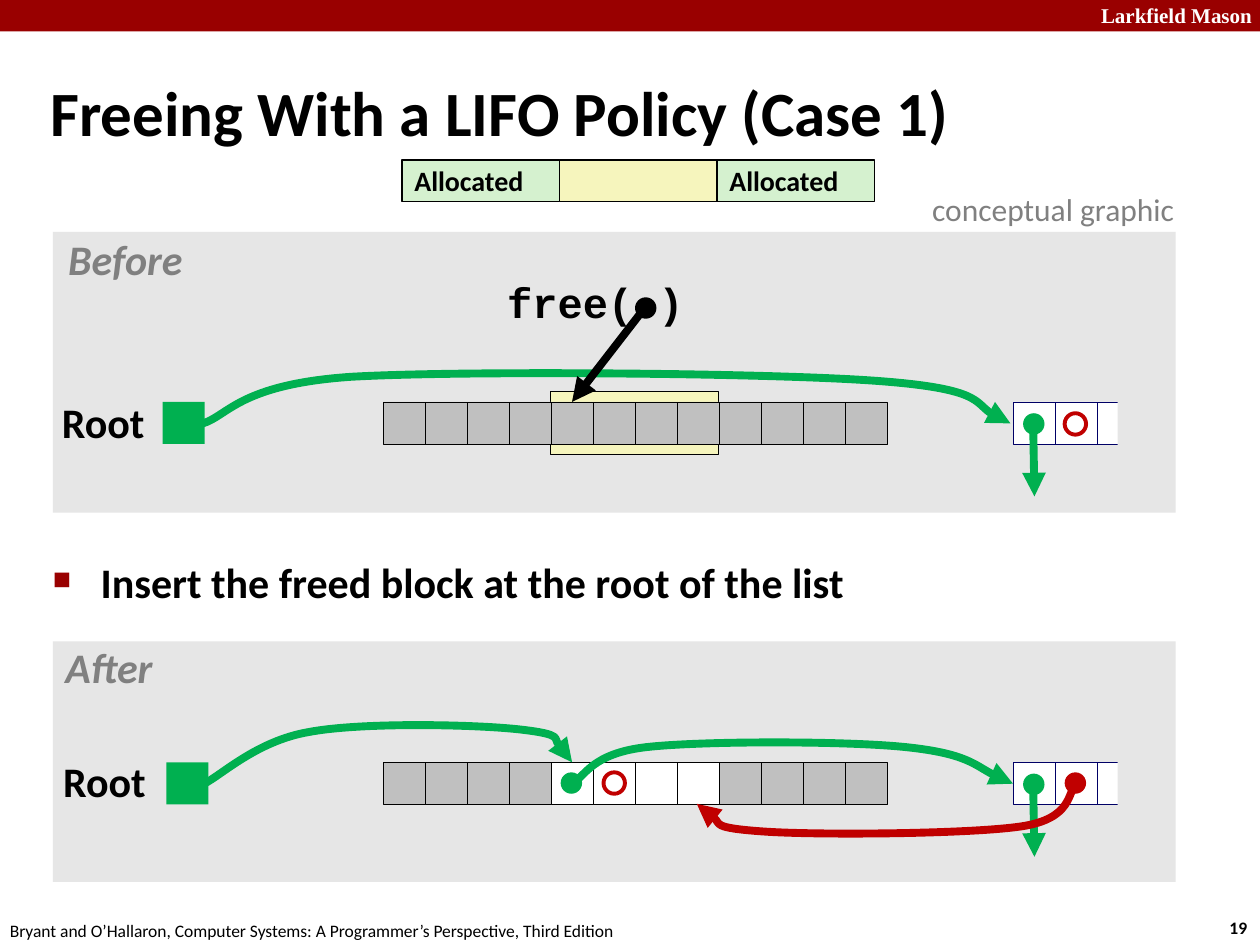
from typing import NamedTuple, Optional

from lxml import etree
from pptx import Presentation
from pptx.dml.color import RGBColor
from pptx.enum.shapes import MSO_CONNECTOR, MSO_SHAPE
from pptx.enum.text import MSO_ANCHOR, MSO_AUTO_SIZE, PP_ALIGN
from pptx.oxml.ns import qn
from pptx.util import Inches, Pt

BLACK, WHITE, GRAY = "000000", "FFFFFF", "808080"
GREEN, RED, NAVY, BANNER = "00B050", "C00000", "000066", "990000"
PANEL, USED, FREED, ALLOCATED = "E6E6E6", "C0C0C0", "F6F5BD", "D5F1CF"
CELL = 1 / 3
HEAP_LEFT = 3.04
LIST_LEFT = HEAP_LEFT + 15 * CELL
DOT = 0.17
FREED_CELLS = range(4, 8)


class Label(NamedTuple):
    text: str
    left: float
    top: float
    width: float
    height: float
    size: float = 24
    color: str = BLACK
    bold: bool = True
    italic: bool = False
    font: str = "Calibri"
    centered: bool = True


class Curve(NamedTuple):
    """A start point followed by three Bezier points for each segment."""
    color: str
    points: list[tuple[float, float]]


class Panel(NamedTuple):
    title: Label
    top: float
    height: float
    row_top: float
    root_left: float
    root_label: Label


def rgb(value: str) -> RGBColor:
    return RGBColor.from_string(value)


def style(shape, fill: Optional[str], line: Optional[str] = None, weight: float = 0.25):
    shape.shadow.inherit = False
    if fill:
        shape.fill.solid()
        shape.fill.fore_color.rgb = rgb(fill)
    else:
        shape.fill.background()
    if line:
        shape.line.color.rgb = rgb(line)
        shape.line.width = Pt(weight)
    else:
        shape.line.fill.background()
    return shape


def add_box(left, top, width, height, fill, line=None, weight=0.25, kind=MSO_SHAPE.RECTANGLE):
    shape = slide.shapes.add_shape(kind, Inches(left), Inches(top), Inches(width), Inches(height))
    return style(shape, fill, line, weight)


def add_cell(left: float, top: float, fill: str, line: Optional[str] = BLACK) -> None:
    add_box(left, top, CELL, CELL, fill, line)


def add_dot(left: float, top: float, fill: Optional[str], ring: Optional[str] = None) -> None:
    add_box(left, top, DOT, DOT, fill, ring, 2.25, MSO_SHAPE.OVAL)


def set_font(paragraph, size, color=BLACK, bold=True, italic=False, name="Calibri") -> None:
    font = paragraph.font
    font.size, font.bold, font.italic, font.name = Pt(size), bold, italic, name
    font.color.rgb = rgb(color)


def add_label(label: Label) -> None:
    box = slide.shapes.add_textbox(*(Inches(value) for value in label[1:5]))
    frame = box.text_frame
    frame.word_wrap = False
    frame.auto_size = MSO_AUTO_SIZE.SHAPE_TO_FIT_TEXT
    paragraph = frame.paragraphs[0]
    paragraph.text = label.text
    set_font(paragraph, label.size, label.color, label.bold, label.italic, label.font)
    if label.centered:
        frame.margin_left = frame.margin_right = Inches(0.05)
        paragraph.alignment = PP_ALIGN.CENTER
        paragraph.line_spacing = 0.9


def add_arrowhead(shape) -> None:
    etree.SubElement(shape.line._get_or_add_ln(), qn("a:tailEnd"), type="triangle")


def add_arrow(start: tuple[float, float], end: tuple[float, float], color: str) -> None:
    arrow = slide.shapes.add_connector(MSO_CONNECTOR.STRAIGHT, *(Inches(v) for v in start + end))
    arrow.line.color.rgb = rgb(color)
    arrow.line.width = Pt(4.5)
    add_arrowhead(arrow)
    etree.SubElement(arrow._element.spPr, qn("a:effectLst"))


def add_curve(curve: Curve) -> None:
    points = [(Inches(x), Inches(y)) for x, y in curve.points]
    builder = slide.shapes.build_freeform(*points[0])
    builder.add_line_segments(points[1:], close=False)
    shape = style(builder.convert_to_shape(), None, curve.color, 4.5)
    # Regroup the straight segments, three at a time, into cubic segments.
    outline = shape._element.find(".//" + qn("a:path"))
    segments = outline.findall(qn("a:lnTo"))
    for first in range(0, len(segments), 3):
        cubic = etree.SubElement(outline, qn("a:cubicBezTo"))
        for segment in segments[first:first + 3]:
            cubic.append(segment[0])
            outline.remove(segment)
    add_arrowhead(shape)


def add_panel(panel: Panel) -> None:
    add_box(0.42, panel.top, 8.91, panel.height, PANEL)
    add_label(panel.title)
    add_label(panel.root_label)


def add_heap(panel: Panel, freed_fill: str) -> None:
    """Draw the root, the heap row and the first block of the free list."""
    top = panel.row_top
    for index in range(12):
        add_cell(HEAP_LEFT + index * CELL, top, freed_fill if index in FREED_CELLS else USED)
    add_cell(panel.root_left, top, GREEN, None)
    for index in range(3):
        add_cell(LIST_LEFT + index * CELL, top, WHITE, NAVY)
    add_box(8.87, top - 0.08, CELL, 0.5, PANEL)
    add_dot(8.12, top + 0.09, GREEN)
    add_arrow((8.2, top + 0.17), (8.21, top + 0.75), GREEN)


before = Panel(Label("Before", 0.48, 1.85, 1.03, 0.47, color=GRAY, italic=True),
               1.84, 2.23, 3.19, 1.29, Label("Root", 0.44, 3.14, 0.76, 0.47))
after = Panel(Label("After", 0.46, 5.09, 0.81, 0.47, color=GRAY, italic=True),
              5.09, 1.91, 6.05, 1.32, Label("Root", 0.45, 5.99, 0.76, 0.47))

root_to_list = Curve(GREEN, [
    (1.61, 3.36), (1.81, 3.3), (1.9, 3.05), (2.79, 2.99), (3.67, 2.94), (6.05, 2.96),
    (6.92, 3.02), (7.79, 3.08), (7.79, 3.29), (8.02, 3.36)])
after_curves = [
    Curve(GREEN, [
        (4.54, 6.22), (4.64, 6.17), (4.69, 5.98), (5.13, 5.93), (5.57, 5.88), (6.71, 5.88),
        (7.19, 5.93), (7.67, 5.98), (7.86, 6.16), (8.04, 6.22)]),
    Curve(RED, [
        (8.54, 6.23), (8.47, 6.28), (8.52, 6.5), (8.1, 6.56), (7.69, 6.62), (6.49, 6.63),
        (6.06, 6.6), (5.63, 6.57), (5.64, 6.43), (5.53, 6.38)]),
    Curve(GREEN, [
        (1.62, 6.22), (1.76, 6.15), (2.04, 5.88), (2.45, 5.81), (2.87, 5.73), (3.78, 5.75),
        (4.13, 5.79), (4.48, 5.83), (4.46, 5.99), (4.54, 6.05)]),
]

presentation = Presentation()
presentation.slide_width, presentation.slide_height = Inches(10), Inches(7.5)
slide = presentation.slides.add_slide(presentation.slide_layouts[5])

# Banner, page number and footer
add_box(0, 0, 10, 0.25, BANNER)
for label in (
    Label("Larkfield Mason", 8.64, -0.03, 1.43, 0.3, 12, WHITE, font="Times New Roman", centered=False),
    Label("19", 9.66, 7.23, 0.37, 0.27, 10, centered=False),
    Label("Bryant and O’Hallaron, Computer Systems: A Programmer’s Perspective, Third Edition",
          -0.02, 7.25, 5.08, 0.27, 10, bold=False, centered=False),
    Label("conceptual graphic", 7.3, 1.46, 2.17, 0.4, 18, GRAY, bold=False, centered=False),
):
    add_label(label)

# Title
title = slide.shapes.title
title.left, title.top, title.width, title.height = (Inches(v) for v in (0.3, 0.5, 9.53, 0.86))
title.text_frame.vertical_anchor = MSO_ANCHOR.MIDDLE
title_paragraph = title.text_frame.paragraphs[0]
title_paragraph.text = "Freeing With a LIFO Policy (Case 1)"
title_paragraph.alignment = PP_ALIGN.LEFT
title_paragraph.line_spacing = 0.87
set_font(title_paragraph, 36)

# Bullet
bullet_box = slide.shapes.add_textbox(Inches(0.32), Inches(4.4), Inches(9.09), Inches(0.61))
bullet_box.text_frame.word_wrap = True
bullet = bullet_box.text_frame.paragraphs[0]
bullet.text = "Insert the freed block at the root of the list"
bullet.line_spacing = 0.95
set_font(bullet, 24)
properties = bullet._p.get_or_add_pPr()
properties.set("marL", str(Inches(0.38)))
properties.set("indent", str(Inches(-0.38)))
bullet_color = etree.Element(qn("a:buClr"))
etree.SubElement(bullet_color, qn("a:srgbClr"), val=BANNER)
bullet_size = etree.Element(qn("a:buSzPct"), val="60000")
bullet_mark = etree.Element(qn("a:buChar"), char="■")
properties.find(qn("a:defRPr")).addprevious(bullet_color)
bullet_color.addnext(bullet_size)
bullet_size.addnext(bullet_mark)

# Block legend
for index, (text, fill) in enumerate([("Allocated", ALLOCATED), ("", FREED), ("Allocated", ALLOCATED)]):
    block = add_box(3.19 + index * 1.25, 1.27, 1.25, 0.33, fill, BLACK, 1)
    if text:
        block.text_frame.word_wrap = False
        block.text_frame.text = text
        set_font(block.text_frame.paragraphs[0], 16)

# Before
add_panel(before)
add_box(4.37, 3.11, 4 * CELL, 0.5, FREED, BLACK, 0.75)
add_curve(root_to_list)
add_heap(before, USED)
add_dot(8.45, 3.28, None, RED)
add_label(Label("free( )", 3.97, 2.19, 1.51, 0.47, font="Courier New"))
add_dot(5.04, 2.36, BLACK)
add_arrow((5.12, 2.44), (4.54, 3.19), BLACK)

# After
add_panel(after)
add_heap(after, WHITE)
add_dot(4.45, 6.13, GREEN)
add_dot(4.79, 6.13, None, RED)
add_dot(8.45, 6.13, RED)
for curve in after_curves:
    add_curve(curve)

presentation.save("out.pptx")
